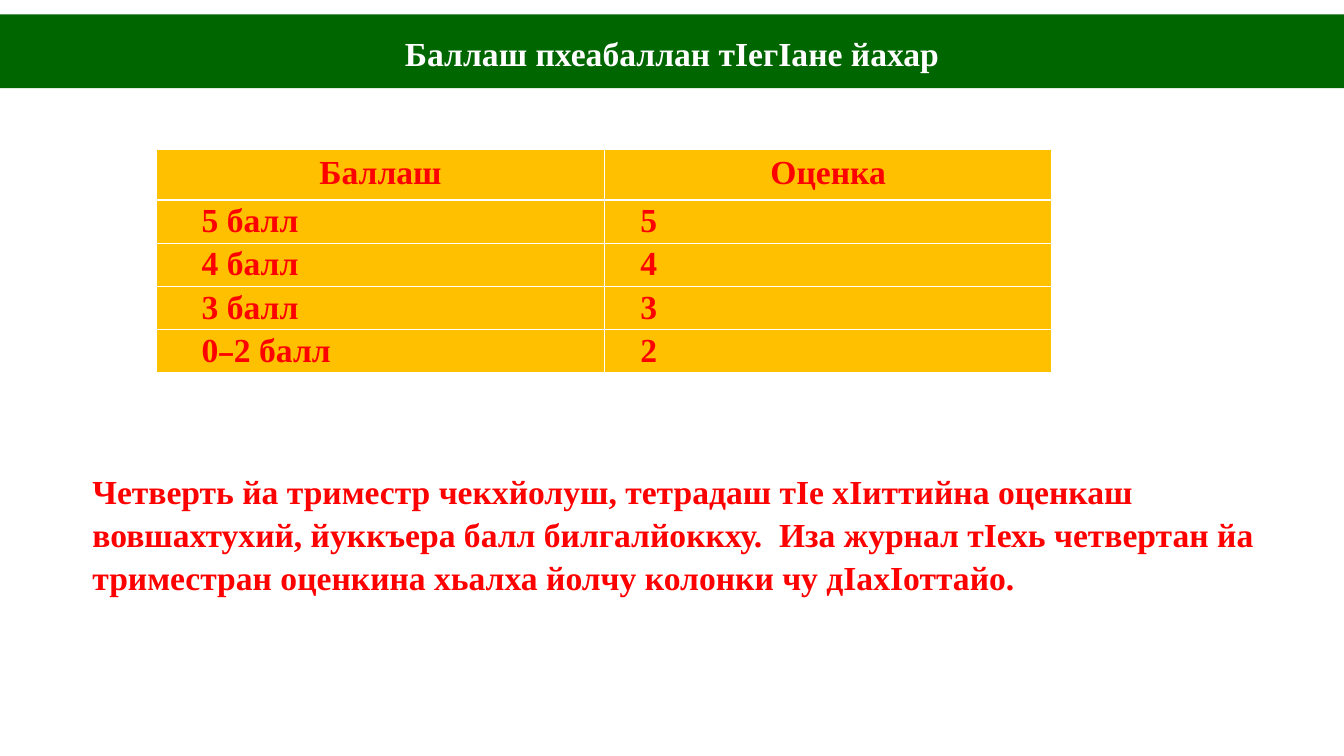
from dataclasses import dataclass

from pptx import Presentation
from pptx.dml.color import RGBColor
from pptx.enum.text import MSO_ANCHOR, MSO_AUTO_SIZE, PP_ALIGN
from pptx.util import Cm, Pt

CENTER = PP_ALIGN.CENTER
LEFT = PP_ALIGN.LEFT
MIDDLE = MSO_ANCHOR.MIDDLE
TOP = MSO_ANCHOR.TOP
NO_AUTOFIT = MSO_AUTO_SIZE.NONE
DASH = "–"
TITLE_ONLY = 5


@dataclass(frozen=True)
class Theme:
    banner: RGBColor = RGBColor(0x00, 0x66, 0x00)
    banner_text: RGBColor = RGBColor(0xFF, 0xFF, 0xFF)
    cell: RGBColor = RGBColor(0xFF, 0xC0, 0x00)
    accent_text: RGBColor = RGBColor(0xFF, 0x00, 0x00)
    font: str = "Times New Roman"
    dash_font: str = "Arial"
    size: int = 24
    dash_size: int = 20
    line_spacing: float = 1.07


@dataclass(frozen=True)
class GradeRow:
    points: str
    mark: str


THEME = Theme()
HEADING = "Баллаш пхеабаллан тӀегӀане йахар"
HEADER = GradeRow("Баллаш", "Оценка")
GRADES = [
    GradeRow("5 балл", "5"),
    GradeRow("4 балл", "4"),
    GradeRow("3 балл", "3"),
    GradeRow("0–2 балл", "2"),
]
ADVICE = (
    "Четверть йа триместр чекхйолуш, тетрадаш тӀе хӀиттийна оценкаш "
    "вовшахтухий, йуккъера балл билгалйоккху.  Иза журнал тӀехь четвертан йа "
    "триместран оценкина хьалха йолчу колонки чу дӀахӀоттайо."
)
SLIDE_WIDTH, SLIDE_HEIGHT = Cm(33.87), Cm(19.05)
COLUMN_WIDTH = Cm(11.28)
HEADER_HEIGHT, GRADE_HEIGHT = Cm(1.26), Cm(1.09)
GRADE_INDENTS = (Cm(0.95), Cm(0.73))


def format_paragraph(paragraph, color: RGBColor, align=LEFT,
                     spacing: float = THEME.line_spacing) -> None:
    paragraph.alignment = align
    paragraph.line_spacing = spacing
    font = paragraph.font
    font.name, font.size, font.bold = THEME.font, Pt(THEME.size), True
    font.color.rgb = color


def add_banner(slide) -> None:
    banner = slide.shapes.title
    banner.left, banner.top = Cm(0), Cm(0.36)
    banner.width, banner.height = SLIDE_WIDTH, Cm(1.86)
    banner.fill.solid()
    banner.fill.fore_color.rgb = THEME.banner
    frame = banner.text_frame
    frame.text = HEADING
    frame.auto_size = NO_AUTOFIT
    frame.vertical_anchor = MIDDLE
    format_paragraph(frame.paragraphs[0], THEME.banner_text, CENTER)


def fill_header_cell(cell, text: str) -> None:
    cell.text = text
    format_paragraph(cell.text_frame.paragraphs[0], THEME.accent_text, CENTER, 1.0)


def fill_grade_cell(cell, text: str, indent: int) -> None:
    cell.margin_left = cell.margin_right = Cm(0.18)
    cell.margin_top = cell.margin_bottom = Cm(0)
    cell.vertical_anchor = TOP
    paragraph = cell.text_frame.paragraphs[0]
    format_paragraph(paragraph, THEME.accent_text)
    paragraph._p.get_or_add_pPr().set("marL", str(indent))
    # The dash in a range has its own typeface and size
    for part in filter(None, text.partition(DASH)):
        run = paragraph.add_run()
        run.text = part
        if part == DASH:
            run.font.name, run.font.size = THEME.dash_font, Pt(THEME.dash_size)


def add_grade_table(slide) -> None:
    height = HEADER_HEIGHT + GRADE_HEIGHT * len(GRADES)
    table = slide.shapes.add_table(
        len(GRADES) + 1, 2, Cm(3.95), Cm(3.77), COLUMN_WIDTH * 2, height
    ).table
    table.horz_banding = False
    for column in table.columns:
        column.width = COLUMN_WIDTH
    for index, grade in enumerate([HEADER, *GRADES]):
        table.rows[index].height = GRADE_HEIGHT if index else HEADER_HEIGHT
        texts = (grade.points, grade.mark)
        for cell, text, indent in zip(table.rows[index].cells, texts, GRADE_INDENTS):
            cell.fill.solid()
            cell.fill.fore_color.rgb = THEME.cell
            if index:
                fill_grade_cell(cell, text, indent)
            else:
                fill_header_cell(cell, text)


def add_advice(slide) -> None:
    advice = slide.shapes.add_textbox(Cm(2.08), Cm(11.66), Cm(30.78), Cm(3.56))
    frame = advice.text_frame
    frame.word_wrap = True
    frame.text = ADVICE
    format_paragraph(frame.paragraphs[0], THEME.accent_text)
    frame.paragraphs[0].space_after = Pt(8)


def main() -> None:
    deck = Presentation()
    deck.slide_width, deck.slide_height = SLIDE_WIDTH, SLIDE_HEIGHT
    slide = deck.slides.add_slide(deck.slide_layouts[TITLE_ONLY])
    # Advice below, grade scale in the middle, heading across the top
    add_advice(slide)
    add_grade_table(slide)
    add_banner(slide)
    deck.save("out.pptx")


if __name__ == "__main__":
    main()
